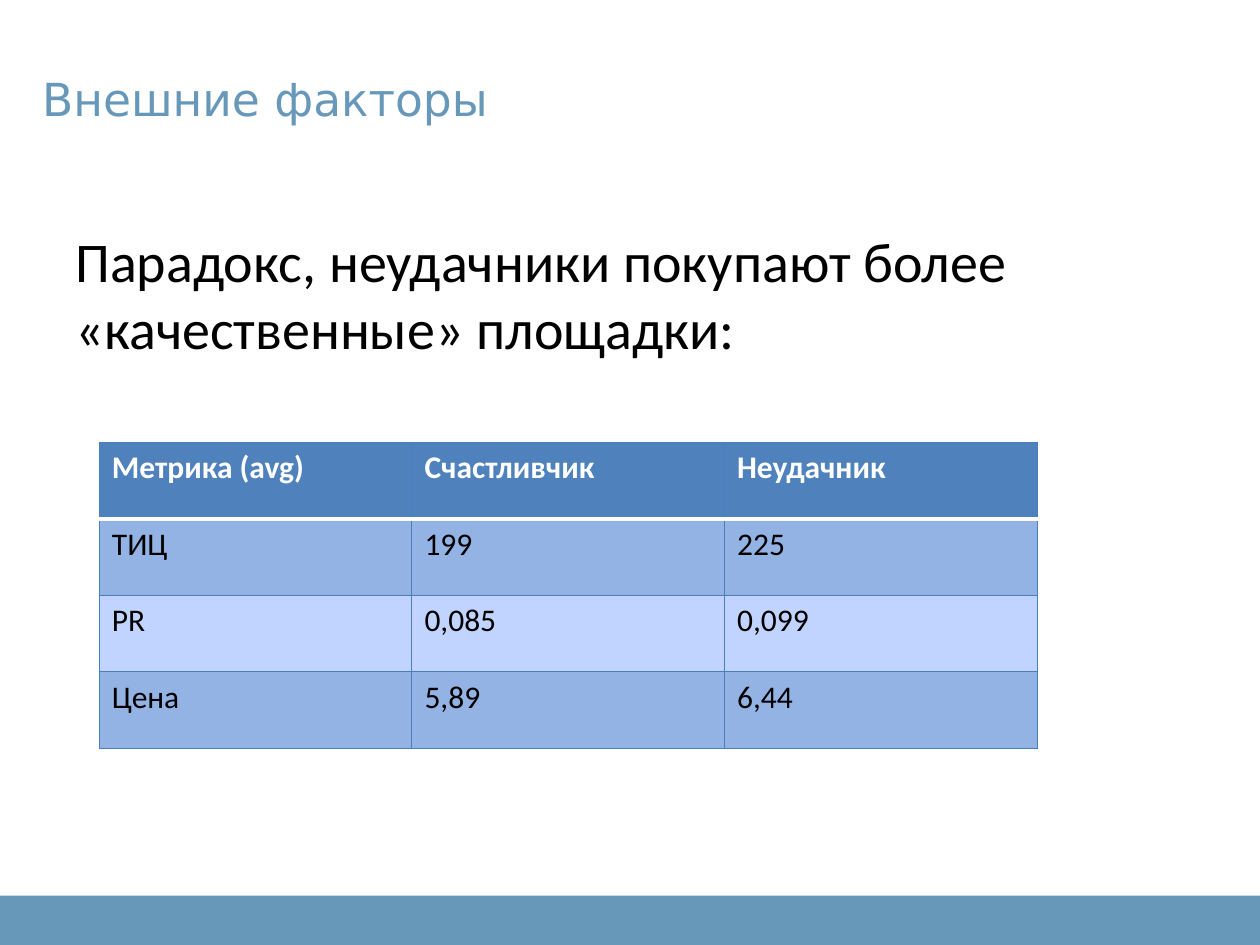
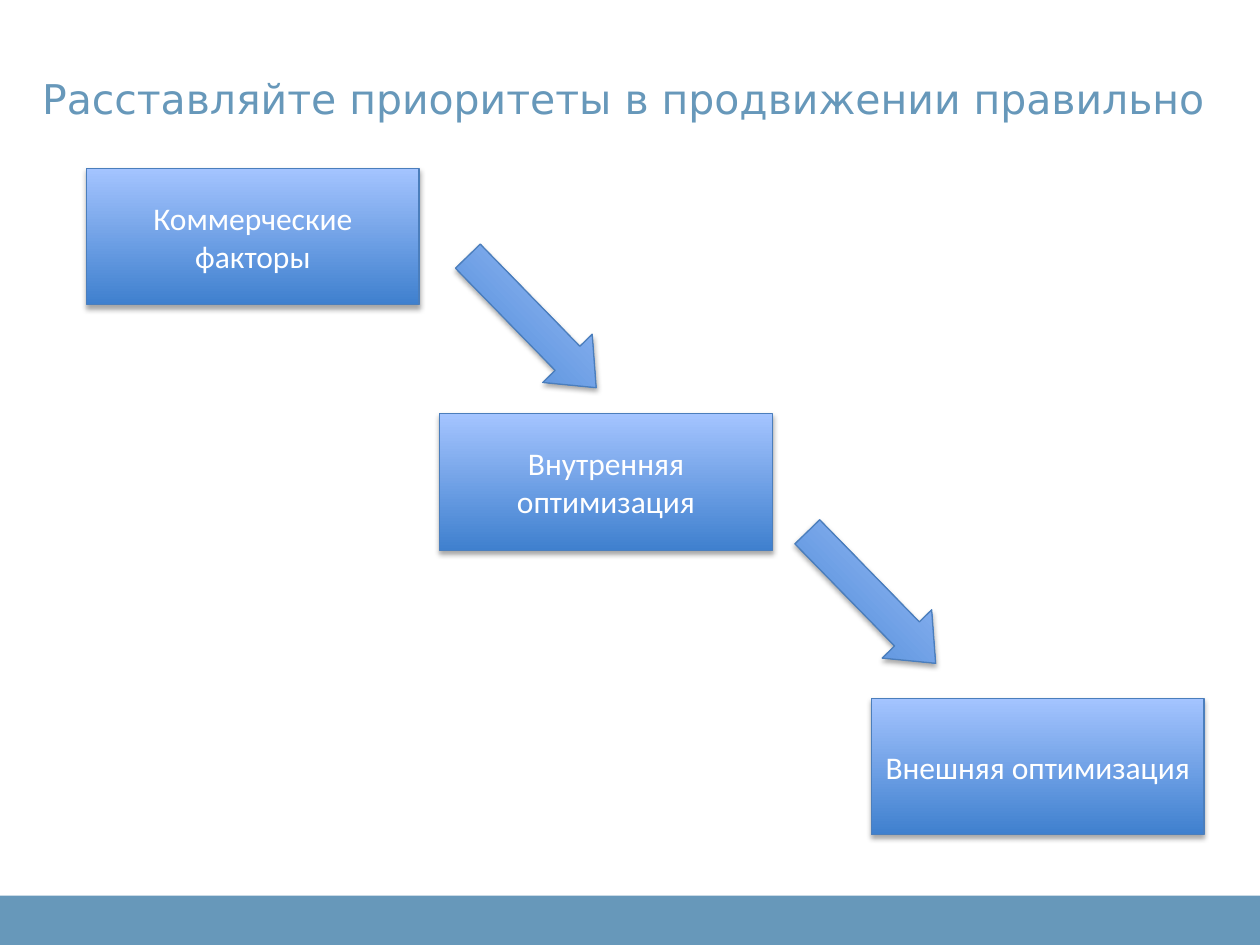
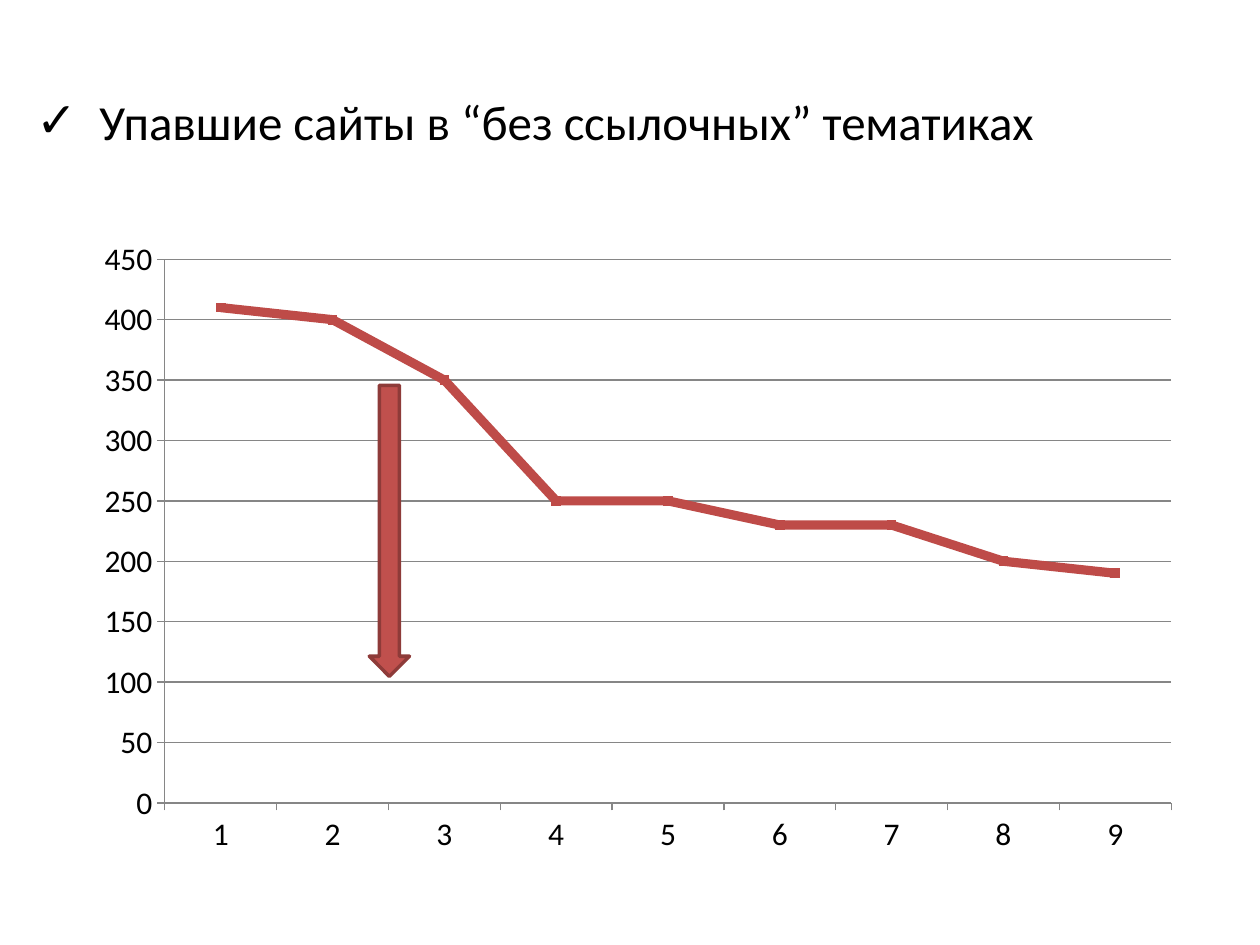
from dataclasses import dataclass

from lxml import etree
from pptx import Presentation
from pptx import util as u
from pptx.chart import data as chart_data
from pptx.dml.color import RGBColor
from pptx.enum import chart as chart_enum, shapes, text
from pptx.oxml import ns

Pt = u.Pt


@dataclass(frozen=True)
class Theme:
    brand: str = "6798BA"
    ink: str = "000000"
    white: str = "FFFFFF"
    header: str = "4F81BD"
    row_dark: str = "93B3E4"
    row_light: str = "C0D4FF"
    border: str = "4B7EBC"
    gradient: tuple = ("3F80CE", "A4C4FF")
    series: str = "BE4B48"
    drop: str = "C0504D"
    drop_line: str = "8E3B39"
    grid: str = "868686"
    title_font: str = "DejaVu Sans"
    body_font: str = "Calibri"
    title_size: float = 26
    long_title_size: float = 23.4
    lead_size: float = 32
    bullet_size: float = 28
    label_size: float = 18


THEME = Theme()
SLIDE_WIDTH, SLIDE_HEIGHT = 720, 540
TITLE_BOX = (17, 28, 720, 56)
BAND_BOX = (0, 511.75, SLIDE_WIDTH, 28.25)


def rgb(value):
    return RGBColor.from_string(value)


def points(box):
    return [Pt(length) for length in box]


def sub(parent, tag, **attributes):
    return etree.SubElement(parent, ns.qn(tag), attributes)


def write(frame, words, size, color, font=THEME.body_font, bold=False):
    """Put one paragraph in the frame and return it."""
    frame.word_wrap = True
    paragraph = frame.paragraphs[0]
    run = paragraph.add_run()
    run.text = words
    for target in (paragraph.font, run.font):
        target.name, target.size, target.bold = font, Pt(size), bold
        target.color.rgb = rgb(color)
    return paragraph


def add_text(slide, box, words, size, color=THEME.ink, font=THEME.body_font,
             anchor=text.MSO_ANCHOR.TOP):
    frame = slide.shapes.add_textbox(*points(box)).text_frame
    frame.vertical_anchor = anchor
    return write(frame, words, size, color, font)


def add_solid(slide, kind, box, fill, line=None, line_width=0):
    shape = slide.shapes.add_shape(kind, *points(box))
    shape.shadow.inherit = False
    shape.fill.solid()
    shape.fill.fore_color.rgb = rgb(fill)
    if line:
        shape.line.color.rgb = rgb(line)
        shape.line.width = Pt(line_width)
    else:
        shape.line.fill.background()
    return shape


def add_glossy(slide, kind, box):
    """Shape with a vertical gradient and a soft shadow below."""
    shape = slide.shapes.add_shape(kind, *points(box))
    shape.fill.gradient()
    shape.fill.gradient_angle = 90
    for stop, color in zip(shape.fill.gradient_stops, THEME.gradient):
        stop.color.rgb = rgb(color)
    shape.line.color.rgb = rgb(THEME.border)
    shape.line.width = Pt(0.75)
    shape.shadow.inherit = False
    effects = shape._element.spPr.find(ns.qn("a:effectLst"))
    shadow = sub(effects, "a:outerShdw", blurRad=str(Pt(3.1)), dist=str(Pt(1.8)),
                 dir="5400000", rotWithShape="0")
    sub(sub(shadow, "a:srgbClr", val="000000"), "a:alpha", val="35000")
    return shape


def add_slide(presentation):
    return presentation.slides.add_slide(presentation.slide_layouts[6])


def add_titled_slide(presentation, title, size=THEME.title_size):
    slide = add_slide(presentation)
    add_solid(slide, shapes.MSO_SHAPE.RECTANGLE, BAND_BOX, THEME.brand)
    add_text(slide, TITLE_BOX, title, size, THEME.brand, THEME.title_font,
             text.MSO_ANCHOR.MIDDLE)
    return slide


# Table of metrics
def set_borders(cell, **edges):
    properties = cell._tc.get_or_add_tcPr()
    for side in "LRTB":
        color, width = edges.get(side, (THEME.border, 0.75))
        line = sub(properties, f"a:ln{side}", w=str(Pt(width)))
        sub(sub(line, "a:solidFill"), "a:srgbClr", val=color)


def add_metrics_table(slide, box, rows):
    table = slide.shapes.add_table(len(rows), len(rows[0]), *points(box)).table
    rule = (THEME.white, 2.25)
    header_line = (THEME.border, 0.75)
    last = len(rows[0]) - 1
    for row_index, row in enumerate(rows):
        is_header = row_index == 0
        for column_index, words in enumerate(row):
            cell = table.cell(row_index, column_index)
            edges = {}
            if is_header:
                edges["B"] = rule
                if column_index > 0:
                    edges["L"] = header_line
                if column_index < last:
                    edges["R"] = header_line
            elif row_index == 1:
                edges["T"] = rule
            set_borders(cell, **edges)
            cell.fill.solid()
            band = THEME.row_dark if row_index % 2 else THEME.row_light
            cell.fill.fore_color.rgb = rgb(THEME.header if is_header else band)
            write(cell.text_frame, words, THEME.label_size,
                  THEME.white if is_header else THEME.ink, bold=is_header)


def build_factors_slide(presentation):
    slide = add_titled_slide(presentation, "Внешние факторы")
    lead = add_text(slide, (36, 126, 648, 356),
                    "Парадокс, неудачники покупают более «качественные» площадки:",
                    THEME.lead_size)
    lead.space_before = Pt(6.4)
    add_metrics_table(slide, (56.75, 252.75, 536, 175), [
        ("Метрика (avg)", "Счастливчик", "Неудачник"),
        ("ТИЦ", "199", "225"),
        ("PR", "0,085", "0,099"),
        ("Цена", "5,89", "6,44"),
    ])


# Descending steps joined by arrows
def add_step(slide, box, words):
    shape = add_glossy(slide, shapes.MSO_SHAPE.RECTANGLE, box)
    shape.text_frame.vertical_anchor = text.MSO_ANCHOR.MIDDLE
    paragraph = write(shape.text_frame, words, THEME.label_size, THEME.white)
    paragraph.alignment = text.PP_ALIGN.CENTER


def add_step_arrow(slide, box):
    arrow = add_glossy(slide, shapes.MSO_SHAPE.RIGHT_ARROW, box)
    arrow.adjustments[1] = 0.594
    arrow.rotation = 45.7


def build_priorities_slide(presentation):
    slide = add_titled_slide(presentation,
                             "Расставляйте приоритеты в продвижении правильно",
                             THEME.long_title_size)
    steps = [(49.5, 96.25, "Коммерческие факторы"),
             (251.25, 236.5, "Внутренняя оптимизация"),
             (498, 399, "Внешняя оптимизация")]
    for left, top, words in steps:
        add_step(slide, (left, top, 190, 78), words)
    for left, top in [(251.5, 164.25), (445.5, 321.75)]:
        add_step_arrow(slide, (left, top, 105, 39.5))


# Line chart of falling sites
def add_check_item(slide, box, words):
    paragraph = add_text(slide, box, words, THEME.bullet_size)
    paragraph.line_spacing = 1.5
    properties = paragraph._p.get_or_add_pPr()
    properties.set("marL", str(Pt(36)))
    properties.set("indent", str(Pt(-36)))
    run_defaults = properties.find(ns.qn("a:defRPr"))
    run_defaults.addprevious(sub(properties, "a:buFont", typeface=THEME.title_font))
    run_defaults.addprevious(sub(properties, "a:buChar", char="✓"))


def add_decline_chart(slide, box, values):
    numbers = chart_data.CategoryChartData()
    numbers.categories = [str(index + 1) for index in range(len(values))]
    numbers.add_series("Series 1", values)
    chart = slide.shapes.add_chart(chart_enum.XL_CHART_TYPE.LINE_MARKERS_STACKED,
                                   *points(box), numbers).chart
    chart.has_legend = chart.has_title = False
    chart.font.name, chart.font.size = THEME.body_font, Pt(THEME.label_size)
    chart.font.color.rgb = rgb(THEME.ink)
    chart.plots[0].vary_by_categories = False

    value_axis = chart.value_axis
    value_axis.minimum_scale, value_axis.maximum_scale = 0, 450
    value_axis.major_unit = 50
    value_axis.has_major_gridlines = True
    for axis in (chart.category_axis, value_axis):
        axis.major_tick_mark = chart_enum.XL_TICK_MARK.OUTSIDE
    for part in (chart.category_axis, value_axis, value_axis.major_gridlines):
        part.format.line.color.rgb = rgb(THEME.grid)
        part.format.line.width = Pt(0.75)

    series = chart.plots[0].series[0]
    series.smooth = False
    series.format.line.color.rgb = rgb(THEME.series)
    series.format.line.width = Pt(5.25)
    series.marker.style = chart_enum.XL_MARKER_STYLE.SQUARE
    series.marker.size = 5
    series.marker.format.fill.solid()
    series.marker.format.fill.fore_color.rgb = rgb(THEME.series)
    series.marker.format.line.color.rgb = rgb(THEME.series)


def build_decline_slide(presentation):
    slide = add_slide(presentation)
    add_check_item(slide, (13.75, 31.75, 706.25, 52.5),
                   "Упавшие сайты в “без ссылочных” тематиках")
    add_decline_chart(slide, (47, 130, 635, 365),
                      (410, 400, 350, 250, 250, 230, 230, 200, 190))
    add_solid(slide, shapes.MSO_SHAPE.DOWN_ARROW, (211, 220.25, 23, 166.25),
              THEME.drop, THEME.drop_line, 2)


def main():
    presentation = Presentation()
    presentation.slide_width = Pt(SLIDE_WIDTH)
    presentation.slide_height = Pt(SLIDE_HEIGHT)
    build_factors_slide(presentation)
    build_priorities_slide(presentation)
    build_decline_slide(presentation)
    presentation.save("out.pptx")


if __name__ == "__main__":
    main()
